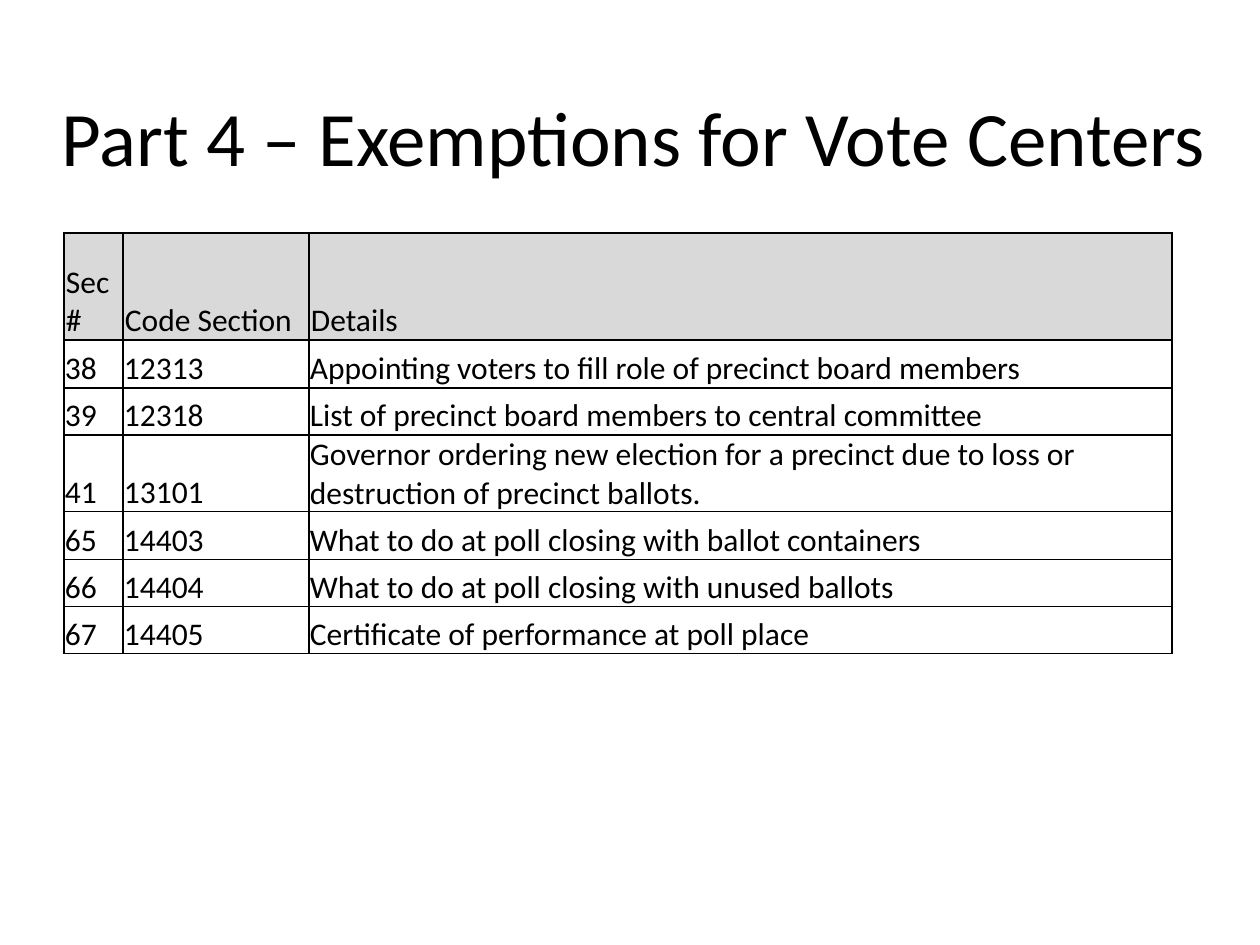
from dataclasses import dataclass
from typing import Any, Optional

from lxml.etree import SubElement
from pptx import Presentation
from pptx.dml.color import RGBColor
from pptx.enum.text import MSO_ANCHOR
from pptx.oxml.ns import qn
from pptx.util import Emu, Pt

PX_PER_INCH = 126


@dataclass(frozen=True)
class Theme:
    font: str = "Calibri"
    ink: str = "000000"
    header_fill: str = "D9D9D9"
    title_size: int = 44
    table_size: int = 18
    border_width: int = 1


@dataclass(frozen=True)
class Box:
    left: int
    top: int
    width: int
    height: int


@dataclass(frozen=True)
class Row:
    height: int
    texts: tuple[str, str, str]
    inset: int = 1
    fill: Optional[str] = None


THEME = Theme()
TITLE = "Part 4 – Exemptions for Vote Centers"
TITLE_BOX = Box(49, 50, 1203, 183)
TABLE_LEFT, TABLE_TOP = 64, 233
COLUMN_WIDTHS = (59, 186, 863)
ROWS = (
    Row(107, ("Sec#", "Code Section", "Details"), 2, THEME.header_fill),
    Row(48, ("38", "12313", "Appointing voters to fill role of precinct board members")),
    Row(47, ("39", "12318", "List of precinct board members to central committee")),
    Row(48, ("41", "13101", "Governor ordering new election for a precinct due to "
                            "loss or destruction of precinct ballots.")),
    Row(48, ("65", "14403", "What to do at poll closing with ballot containers")),
    Row(47, ("66", "14404", "What to do at poll closing with unused ballots")),
    Row(47, ("67", "14405", "Certificate of performance at poll place")),
)


def px(n: int) -> Emu:
    return Emu(round(n * 914400 / PX_PER_INCH))


def place(box: Box) -> tuple[Emu, ...]:
    return px(box.left), px(box.top), px(box.width), px(box.height)


def apply_format(target: Any, values: dict[str, Any]) -> None:
    for name, value in values.items():
        setattr(target, name, value)


def write(tf: Any, text: str, size: int) -> Any:
    p = tf.paragraphs[0]
    r = p.add_run()
    r.text = text
    apply_format(r.font, {"name": THEME.font, "size": Pt(size)})
    r.font.color.rgb = RGBColor.from_string(THEME.ink)
    return p


def add_title(s: Any, text: str, box: Box) -> None:
    tf = s.shapes.add_textbox(*place(box)).text_frame
    apply_format(tf, {"word_wrap": True, "vertical_anchor": MSO_ANCHOR.MIDDLE})
    p = write(tf, text, THEME.title_size)
    p.line_spacing = 0.9


def add_borders(cell: Any) -> None:
    tc_pr = cell._tc.get_or_add_tcPr()
    for side in ("lnL", "lnR", "lnT", "lnB"):
        ln = SubElement(tc_pr, qn(f"a:{side}"), w=str(Pt(THEME.border_width)))
        fill = SubElement(ln, qn("a:solidFill"))
        SubElement(fill, qn("a:srgbClr"), val=THEME.ink)


def format_cell(cell: Any, text: str, row: Row) -> None:
    inset = px(row.inset)
    apply_format(cell, {
        "margin_left": inset,
        "margin_top": inset,
        "margin_right": inset,
        "margin_bottom": 0,
        "vertical_anchor": MSO_ANCHOR.BOTTOM,
    })
    write(cell.text_frame, text, THEME.table_size)
    add_borders(cell)
    if row.fill:
        cell.fill.solid()
        cell.fill.fore_color.rgb = RGBColor.from_string(row.fill)
    else:
        cell.fill.background()


def add_sections_table(s: Any, rows: tuple[Row, ...], widths: tuple[int, ...]) -> None:
    box = Box(TABLE_LEFT, TABLE_TOP, sum(widths), sum(row.height for row in rows))
    table = s.shapes.add_table(len(rows), len(widths), *place(box)).table
    apply_format(table, {"first_row": False, "horz_banding": False})
    for column, width in zip(table.columns, widths):
        column.width = px(width)
    for table_row, row in zip(table.rows, rows):
        table_row.height = px(row.height)
        for cell, text in zip(table_row.cells, row.texts):
            format_cell(cell, text, row)


def main() -> None:
    prs = Presentation()
    apply_format(prs, {"slide_width": px(1260), "slide_height": px(945)})
    s = prs.slides.add_slide(prs.slide_layouts[6])
    add_title(s, TITLE, TITLE_BOX)
    add_sections_table(s, ROWS, COLUMN_WIDTHS)
    prs.save("out.pptx")


if __name__ == "__main__":
    main()
